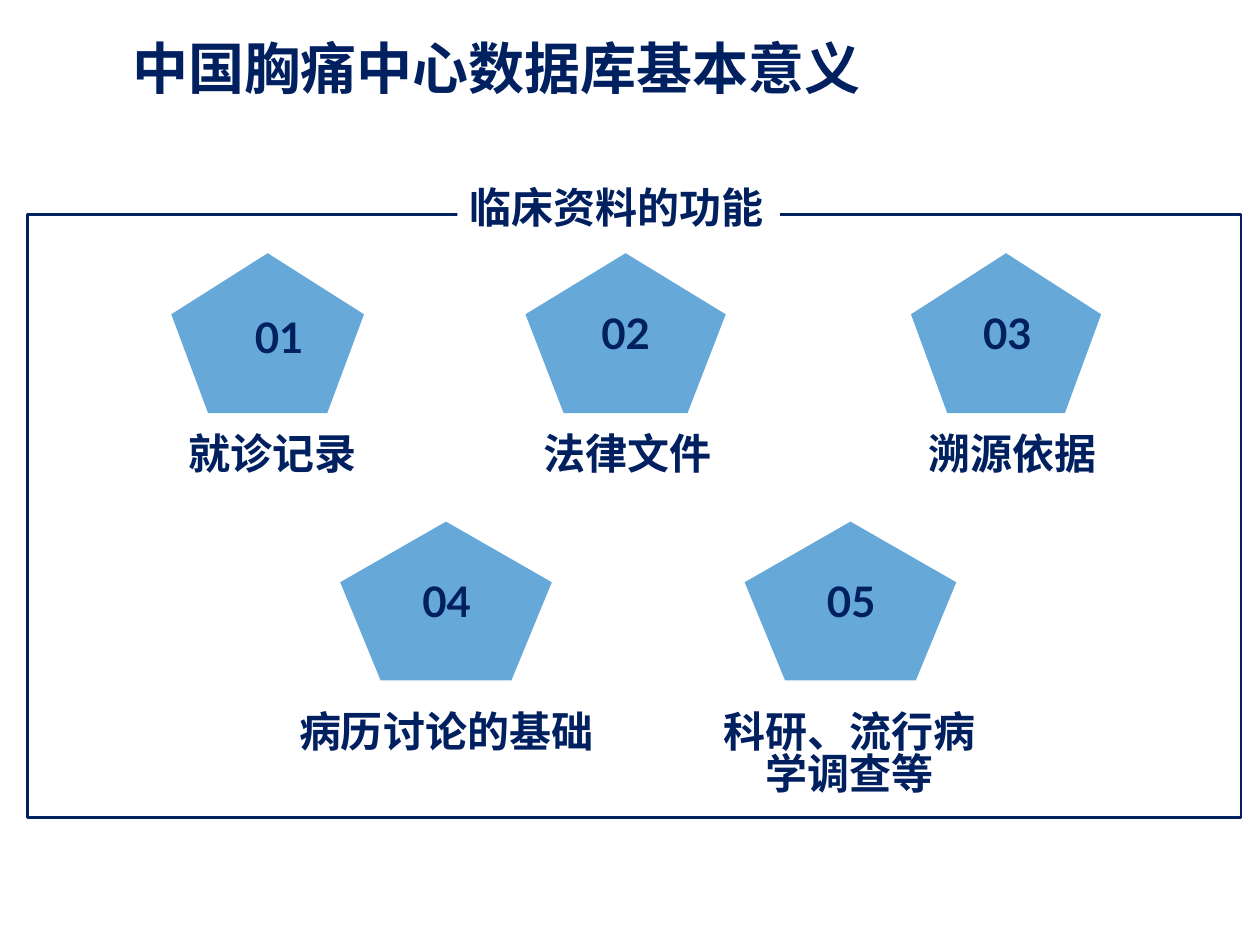
from dataclasses import dataclass

from lxml.etree import SubElement
from pptx import Presentation
from pptx.dml.color import RGBColor
from pptx.enum.shapes import MSO_SHAPE
from pptx.enum.text import MSO_ANCHOR, PP_ALIGN
from pptx.oxml.ns import qn
from pptx.shapes.autoshape import Shape
from pptx.slide import Slide
from pptx.util import Inches, Pt


@dataclass(frozen=True)
class Theme:
    """Colours, fonts and type sizes of the slide."""

    navy: RGBColor = RGBColor(0x00, 0x20, 0x60)
    sky: RGBColor = RGBColor(0x66, 0xA9, 0xD9)
    white: RGBColor = RGBColor(0xFF, 0xFF, 0xFF)
    chinese: str = "Noto Sans CJK SC"
    numeral: str = "Lato"
    title_size: int = 32
    label_size: int = 24


@dataclass(frozen=True)
class Box:
    """Position and size in inches."""

    left: float
    top: float
    width: float
    height: float

    def lengths(self) -> tuple:
        """Return the four values as lengths."""
        return tuple(map(Inches, (self.left, self.top, self.width, self.height)))


@dataclass(frozen=True)
class Purpose:
    """A numbered purpose of clinical records."""

    caption: str
    pentagon: Box
    numeral: Box
    caption_box: Box


THEME = Theme()
PURPOSES = (
    Purpose("就诊记录", Box(1.36, 2.01, 1.53, 1.27), Box(1.27, 2.42, 1.89, 0.51), Box(0.98, 3.41, 2.36, 0.51)),
    Purpose("法律文件", Box(4.17, 2.01, 1.59, 1.27), Box(4.02, 2.39, 1.89, 0.51), Box(3.8, 3.41, 2.36, 0.51)),
    Purpose("溯源依据", Box(7.23, 2.01, 1.51, 1.27), Box(7.05, 2.39, 1.89, 0.51), Box(6.86, 3.41, 2.36, 0.51)),
    Purpose("病历讨论的基础", Box(2.7, 4.14, 1.68, 1.26), Box(2.6, 4.52, 1.89, 0.51), Box(2.22, 5.62, 2.64, 0.5)),
    Purpose("科研、流行病学调查等", Box(5.91, 4.14, 1.68, 1.26), Box(5.81, 4.52, 1.89, 0.51), Box(5.52, 5.62, 2.45, 0.91)),
)


def write(shape: Shape, text: str, font: str, size: int, frame_format: dict, paragraph_format: dict) -> None:
    """Write one bold navy paragraph into a shape."""
    frame = shape.text_frame
    paragraph = frame.paragraphs[0]
    run = paragraph.add_run()
    run.text = text
    run.font.color.rgb = THEME.navy
    formats = (
        (frame, frame_format),
        (paragraph, paragraph_format),
        (run.font, {"name": font, "size": Pt(size), "bold": True}),
    )
    for target, values in formats:
        for attribute, value in values.items():
            setattr(target, attribute, value)
    SubElement(run.font._element, qn("a:ea"), typeface=font)


def add_label(slide: Slide, box: Box, text: str, font: str, line_spacing: float) -> None:
    """Add a centred label."""
    label = slide.shapes.add_textbox(*box.lengths())
    write(label, text, font, THEME.label_size, {"word_wrap": True},
          {"alignment": PP_ALIGN.CENTER, "line_spacing": line_spacing})


def add_panel(slide: Slide, preset: MSO_SHAPE, box: Box, fill: RGBColor | None = None,
              line: RGBColor | None = None) -> Shape:
    """Add a flat shape with an optional fill and outline."""
    panel = slide.shapes.add_shape(preset, *box.lengths())
    panel.shadow.inherit = False
    if fill is None:
        panel.fill.background()
    else:
        panel.fill.solid()
        panel.fill.fore_color.rgb = fill
    if line is None:
        panel.line.fill.background()
    else:
        panel.line.color.rgb = line
        panel.line.width = Pt(1.5)
    return panel


def add_title(slide: Slide) -> None:
    """Place and fill the title."""
    title = slide.shapes.title
    title.left, title.top, title.width, title.height = Box(0.95, 0.19, 8.2, 0.76).lengths()
    write(title, "中国胸痛中心数据库基本意义", THEME.chinese, THEME.title_size,
          {"vertical_anchor": MSO_ANCHOR.MIDDLE, "word_wrap": True},
          {"alignment": PP_ALIGN.LEFT, "line_spacing": 0.9})


def add_purpose(slide: Slide, number: int, purpose: Purpose) -> None:
    """Draw a pentagon with its number and caption."""
    add_panel(slide, MSO_SHAPE.REGULAR_PENTAGON, purpose.pentagon, fill=THEME.sky)
    add_label(slide, purpose.numeral, f"{number:02}", THEME.numeral, 1.0)
    add_label(slide, purpose.caption_box, purpose.caption, THEME.chinese, 0.83)


def main() -> None:
    """Build and save the slide."""
    presentation = Presentation()
    presentation.slide_width, presentation.slide_height = Inches(10), Inches(7.5)
    slide = presentation.slides.add_slide(presentation.slide_layouts[5])
    add_title(slide)
    add_panel(slide, MSO_SHAPE.RECTANGLE, Box(0.22, 1.7, 9.63, 4.79), line=THEME.navy)
    for number, purpose in enumerate(PURPOSES, start=1):
        add_purpose(slide, number, purpose)
    heading = add_panel(slide, MSO_SHAPE.RECTANGLE, Box(3.63, 1.44, 2.56, 0.5), fill=THEME.white)
    write(heading, "临床资料的功能", THEME.chinese, THEME.label_size,
          {"vertical_anchor": MSO_ANCHOR.TOP, "word_wrap": True},
          {"alignment": PP_ALIGN.LEFT, "line_spacing": 0.9})
    presentation.save("out.pptx")


if __name__ == "__main__":
    main()
